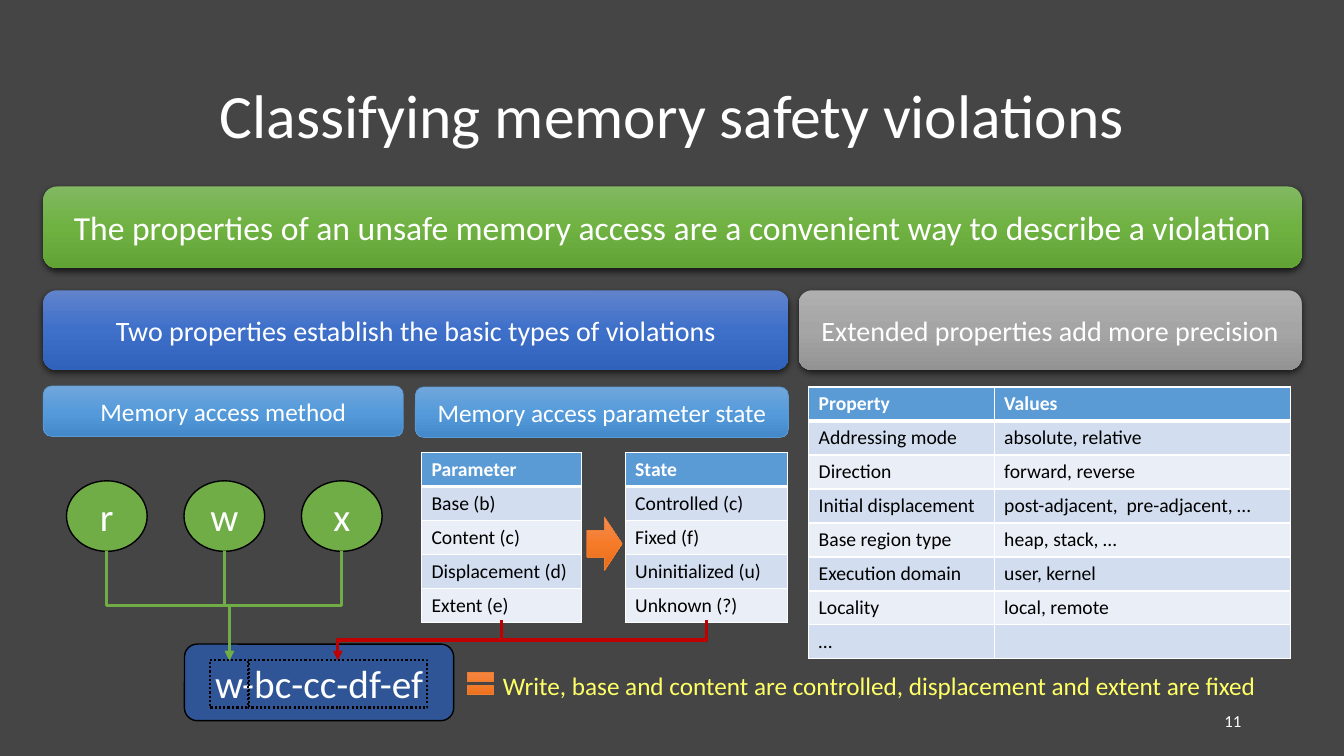
from lxml import etree
from pptx import Presentation
from pptx.dml.color import RGBColor
from pptx.enum.dml import MSO_LINE
from pptx.enum.shapes import MSO_CONNECTOR, MSO_SHAPE
from pptx.enum.text import MSO_ANCHOR, PP_ALIGN
from pptx.oxml.ns import qn
from pptx.util import Inches, Pt

ROUNDED = MSO_SHAPE.ROUNDED_RECTANGLE
OVAL = MSO_SHAPE.OVAL
RECTANGLE = MSO_SHAPE.RECTANGLE
ARROW = MSO_SHAPE.RIGHT_ARROW
EQUALS = MSO_SHAPE.MATH_EQUAL
ELBOW = MSO_CONNECTOR.ELBOW
DOTTED = MSO_LINE.ROUND_DOT
MIDDLE = MSO_ANCHOR.MIDDLE
LEFT, CENTER, RIGHT = PP_ALIGN.LEFT, PP_ALIGN.CENTER, PP_ALIGN.RIGHT

COLORS = {
    "background": "454545", "white": "FFFFFF", "black": "000000",
    "green": "70AD47", "navy": "2F5597", "sky": "5B9BD5",
    "orange": "ED7D31", "red": "C00000", "yellow": "FFFF66",
    "band_dark": "D2DEEF", "band_light": "EAEFF7",
}
GRADIENTS = {
    "green": ("81B861", "6FB242", "62A336"),
    "blue": ("6183CB", "3E70CA", "3062BB"),
    "grey": ("AFAFAF", "A5A5A5", "939393"),
    "sky": ("71A6DB", "559BDB", "448ACA"),
    "orange": ("F18C57", "F67B28", "E56C19"),
}
ROW_HEIGHT = 0.33


def rgb(name):
    return RGBColor.from_string(COLORS[name])


def element(parent, tag, **attributes):
    return etree.SubElement(parent, qn(tag), attributes)


def write(frame, text, size, color="white", align=CENTER, bold=False, wrap=True):
    frame.word_wrap = wrap
    frame.vertical_anchor = MIDDLE
    paragraph = frame.paragraphs[0]
    paragraph.alignment = align
    run = paragraph.add_run()
    run.text = text
    for name, value in {"size": Pt(size), "name": "Calibri", "bold": bold}.items():
        setattr(run.font, name, value)
    run.font.color.rgb = rgb(color)


def add_part(slide, kind, box, fill=None, gradient=None, line=None, width=1, shadow=False):
    part = slide.shapes.add_shape(kind, *map(Inches, box))
    part.shadow.inherit = False
    properties = part._element.spPr
    if gradient:
        grad = etree.Element(qn("a:gradFill"), rotWithShape="1")
        stops = element(grad, "a:gsLst")
        for position, color in zip(("0", "50000", "100000"), GRADIENTS[gradient]):
            element(element(stops, "a:gs", pos=position), "a:srgbClr", val=color)
        element(grad, "a:lin", ang="5400000", scaled="0")
        properties.find(qn("a:prstGeom")).addnext(grad)
    elif fill:
        part.fill.solid()
        part.fill.fore_color.rgb = rgb(fill)
    else:
        part.fill.background()
    if line:
        part.line.color.rgb = rgb(line)
        part.line.width = Pt(width)
    else:
        part.line.fill.background()
    if shadow:
        outer = element(properties.find(qn("a:effectLst")), "a:outerShdw",
                        blurRad=str(Pt(4.5)), dist=str(Pt(1.5)), dir="5400000", rotWithShape="0")
        element(element(outer, "a:srgbClr", val=COLORS["black"]), "a:alpha", val="63000")
    return part


def add_elbow(slide, start, end, color):
    across, down = abs(end[0] - start[0]), end[1] - start[1]
    left = (start[0] + end[0] - down) / 2
    top = (start[1] + end[1] - across) / 2
    rightward = end[0] > start[0]
    begin_x, end_x = (left + down, left) if rightward else (left, left + down)
    elbow = slide.shapes.add_connector(
        ELBOW, Inches(begin_x), Inches(top), Inches(end_x), Inches(top + across))
    elbow.rotation = 270 if rightward else 90
    elbow.line.color.rgb = rgb(color)
    elbow.line.width = Pt(2.25)
    element(elbow.line._get_or_add_ln(), "a:tailEnd", type="triangle")
    element(elbow._element.spPr, "a:effectLst")


def style_cell(cell, text, row):
    properties = cell._tc.get_or_add_tcPr()
    for side in ("L", "R", "T", "B"):
        thick = (row, side) in ((0, "B"), (1, "T"))
        border = element(properties, f"a:ln{side}", w=str(Pt(3 if thick else 1)))
        element(element(border, "a:solidFill"), "a:srgbClr", val=COLORS["white"])
    cell.fill.solid()
    cell.fill.fore_color.rgb = rgb("sky" if row == 0 else "band_dark" if row % 2 else "band_light")
    if text:
        write(cell.text_frame, text, 14, "black" if row else "white", LEFT, row == 0)
        cell.vertical_anchor = MSO_ANCHOR.TOP
    else:
        element(cell.text_frame.paragraphs[0]._p, "a:endParaRPr", sz="1400")


def add_grid(slide, left, top, widths, rows):
    box = (left, top, sum(widths), ROW_HEIGHT * len(rows))
    grid = slide.shapes.add_table(len(rows), len(widths), *map(Inches, box)).table
    for column, width in zip(grid.columns, widths):
        column.width = Inches(width)
    for r, texts in enumerate(rows):
        grid.rows[r].height = Inches(ROW_HEIGHT)
        for c, text in enumerate(texts):
            style_cell(grid.cell(r, c), text, r)


def add_title(slide, box):
    title = slide.shapes.title
    for name, value in zip(("left", "top", "width", "height"), box):
        setattr(title, name, Inches(value))
    write(title.text_frame, "Classifying memory safety violations", 44)


def add_banners(slide, box):
    left, top, width, height = box
    second = top + 1.03
    for text, size, gradient, place in (
        ("The properties of an unsafe memory access are a convenient way to describe a violation",
         24, "green", (left, top, width, 0.81)),
        ("Two properties establish the basic types of violations",
         20, "blue", (left, second, 7.39, height - 1.03)),
        ("Extended properties add more precision",
         20, "grey", (left + 7.49, second, width - 7.49, height - 1.03)),
    ):
        banner = add_part(slide, ROUNDED, place, gradient=gradient, shadow=True)
        write(banner.text_frame, text, size)


def add_heading(slide, text, box):
    heading = add_part(slide, ROUNDED, box, gradient="sky", line="sky", width=0.5)
    write(heading.text_frame, text, 18)


def add_encoding(slide, box):
    left, top, width, height = box
    code = add_part(slide, ROUNDED, box, fill="navy", line="black")
    write(code.text_frame, "w-bc-cc-df-ef", 28)
    method = (left + 0.25, top + 0.16, 0.39, 0.47)
    states = (left + 0.63, top + 0.16, 1.78, 0.47)
    for outline in (method, states):
        add_part(slide, RECTANGLE, outline, line="black", width=1.5).line.dash_style = DOTTED
    return [(x + w / 2, y) for x, y, w, h in (method, states)]


def add_access_method(slide, box, target):
    left, top, width, height = box
    add_heading(slide, "Memory access method", (left, top, width, 0.5))
    for i, method in enumerate("rwx"):
        circle = (left + 0.23 + i * 1.165, top + 0.94, 0.8, 0.7)
        write(add_part(slide, OVAL, circle, fill="green", line="black").text_frame, method, 28)
        add_elbow(slide, (circle[0] + 0.4, circle[1] + 0.7), target, "green")


def add_parameter_state(slide, box, target):
    left, top, width, height = box
    add_heading(slide, "Memory access parameter state", (left, top, width, 0.5))
    for offset, column, entries in (
        (0.06, 1.59, ("Parameter", "Base (b)", "Content (c)", "Displacement (d)", "Extent (e)")),
        (2.08, 1.61, ("State", "Controlled (c)", "Fixed (f)", "Uninitialized (u)", "Unknown (?)")),
    ):
        add_grid(slide, left + offset, top + 0.65, [column], [[entry] for entry in entries])
        add_elbow(slide, (left + offset + column / 2, top + height), target, "red")
    add_part(slide, ARROW, (left + 1.7, top + 1.29, 0.35, 0.53),
             gradient="orange", line="orange", width=0.5)


def add_extended_properties(slide, left, top):
    add_grid(slide, left, top, [1.84, 2.94], [
        ("Property", "Values"),
        ("Addressing mode", "absolute, relative"),
        ("Direction", "forward, reverse"),
        ("Initial displacement", "post-adjacent,  pre-adjacent, …"),
        ("Base region type", "heap, stack, …"),
        ("Execution domain", "user, kernel"),
        ("Locality", "local, remote"),
        ("…", ""),
    ])


def add_reading(slide, box):
    left, top, width, height = box
    reading = slide.shapes.add_textbox(*map(Inches, (left + 0.3, top, width - 0.3, height)))
    write(reading.text_frame, "Write, base and content are controlled, displacement and extent are fixed",
          18, "yellow", LEFT, wrap=False)
    add_part(slide, EQUALS, (left, top, 0.35, 0.36), gradient="orange", line="orange", width=0.5)


def add_page_number(slide, box):
    number = slide.shapes.add_textbox(*map(Inches, box))
    write(number.text_frame, "11", 12, align=RIGHT)


def main():
    deck = Presentation()
    deck.slide_width, deck.slide_height = Inches(13.33), Inches(7.5)
    slide = deck.slides.add_slide(deck.slide_layouts[5])
    slide.background.fill.solid()
    slide.background.fill.fore_color.rgb = rgb("background")
    add_title(slide, (0.92, 0.4, 11.5, 1.45))
    add_banners(slide, (0.43, 1.85, 12.48, 1.82))
    method_target, state_target = add_encoding(slide, (1.83, 6.39, 2.67, 0.76))
    add_access_method(slide, (0.43, 3.83, 3.57, 1.64), method_target)
    add_parameter_state(slide, (4.12, 3.84, 3.7, 2.31), state_target)
    add_extended_properties(slide, 8.02, 3.84)
    add_page_number(slide, (8.83, 6.95, 3.58, 0.4))
    add_reading(slide, (4.59, 6.6, 8.19, 0.4))
    deck.save("out.pptx")


if __name__ == "__main__":
    main()
